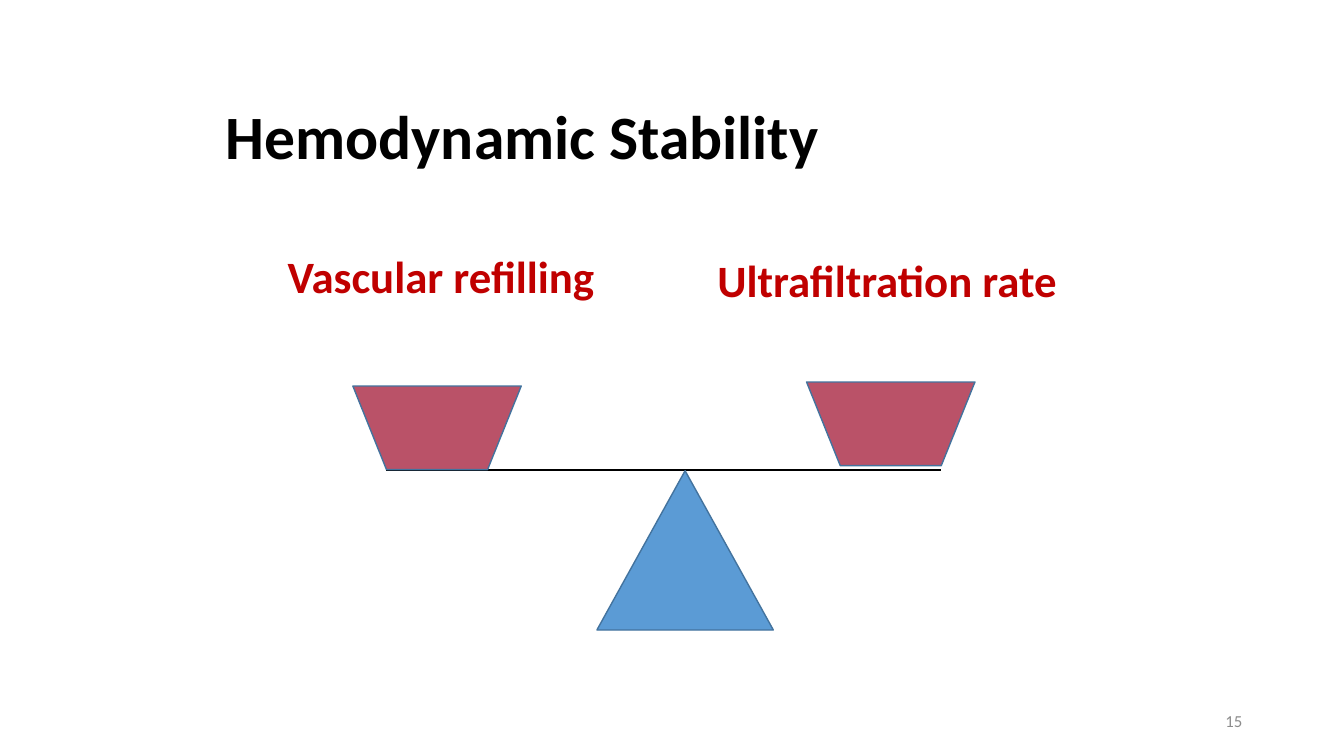
from dataclasses import dataclass

from lxml import etree
from pptx import Presentation
from pptx import util as u
from pptx.dml.color import RGBColor
from pptx.enum import shapes, text
from pptx.oxml.ns import qn

PX = 9144  # 100 px to the inch


@dataclass(frozen=True)
class Theme:
    font: str = "Calibri"
    title_size: int = 44
    label_size: int = 32
    number_size: int = 12
    ink: str = "000000"
    label: str = "C00000"
    number: str = "8C8C8C"
    pan: str = "BA5268"
    pivot: str = "5B9BD5"
    outline: str = "43739E"


THEME = Theme()


def px(*lengths):
    return [u.Emu(length * PX) for length in lengths]


def color(code):
    return RGBColor.from_string(code)


def write(box, words, *, size, ink, bold=False, align=text.PP_ALIGN.LEFT,
          anchor=text.MSO_ANCHOR.TOP, spacing=1.0):
    frame = box.text_frame
    frame.word_wrap = True
    frame.auto_size = text.MSO_AUTO_SIZE.NONE
    frame.vertical_anchor = anchor
    para = frame.paragraphs[0]
    para.alignment = align
    para.line_spacing = spacing
    span = para.add_run()
    span.text = words
    span.font.name = THEME.font
    span.font.size = u.Pt(size)
    span.font.bold = bold
    span.font.color.rgb = color(ink)


def add_title(page, words, *area):
    title = page.shapes.title
    title.left, title.top, title.width, title.height = px(*area)
    write(title, words, size=THEME.title_size, ink=THEME.ink, bold=True,
          anchor=text.MSO_ANCHOR.MIDDLE, spacing=0.9)


def add_text(page, words, *area, **style):
    write(page.shapes.add_textbox(*px(*area)), words, **style)


def add_solid(page, kind, fill, *area):
    shape = page.shapes.add_shape(kind, *px(*area))
    shape.shadow.inherit = False
    shape.fill.solid()
    shape.fill.fore_color.rgb = color(fill)
    shape.line.color.rgb = color(THEME.outline)
    shape.line.width = u.Pt(1)


def add_beam(page, left, right, y):
    beam = page.shapes.add_connector(
        shapes.MSO_CONNECTOR.STRAIGHT, *px(left, y, right, y))
    beam.line.color.rgb = color(THEME.ink)
    beam.line.width = u.Pt(1.5)
    etree.SubElement(beam._element.spPr, qn("a:effectLst"))


def main():
    deck = Presentation()
    deck.slide_width, deck.slide_height = u.Inches(13.33), u.Inches(7.5)
    page = deck.slides.add_slide(deck.slide_layouts.get_by_name("Title Only"))

    add_title(page, "Hemodynamic Stability", 214, 67, 900, 142)

    add_beam(page, 383, 933, 466)
    add_solid(page, shapes.MSO_SHAPE.ISOSCELES_TRIANGLE, THEME.pivot,
              592, 467, 175, 158)
    for left, top in ((350, 383), (800, 379)):
        add_solid(page, shapes.MSO_SHAPE.FLOWCHART_MANUAL_OPERATION, THEME.pan,
                  left, top, 167, 83)

    for words, left, top, width in (
            ("Ultrafiltration rate", 675, 246, 410),
            ("Vascular refilling", 255, 242, 365)):
        add_text(page, words, left, top, width, 64, size=THEME.label_size,
                 ink=THEME.label, bold=True, align=text.PP_ALIGN.CENTER)

    add_text(page, "15", 942, 695, 300, 40, size=THEME.number_size,
             ink=THEME.number, align=text.PP_ALIGN.RIGHT,
             anchor=text.MSO_ANCHOR.MIDDLE)

    deck.save("out.pptx")


if __name__ == "__main__":
    main()
